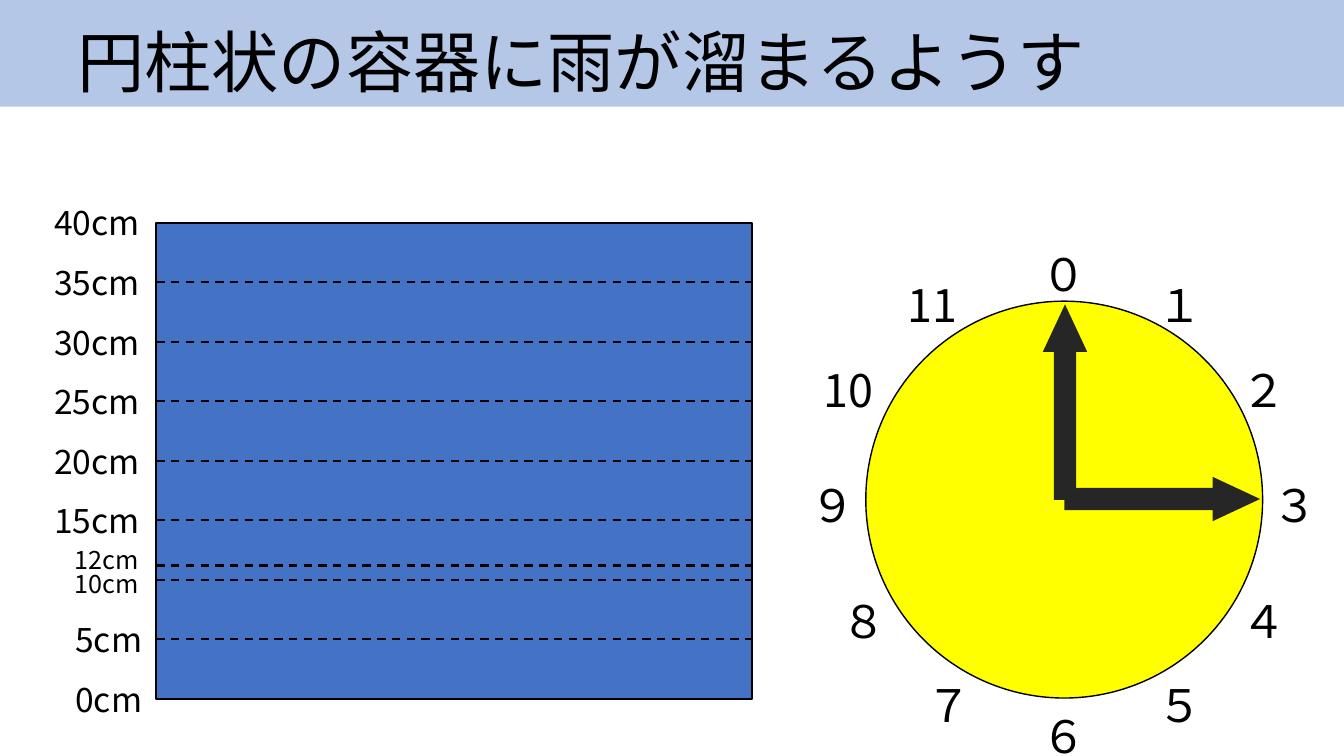
from dataclasses import dataclass
from math import cos, pi, sin

from lxml.etree import SubElement
from pptx import Presentation
from pptx.dml.color import RGBColor
from pptx.enum.dml import MSO_LINE
from pptx.enum.shapes import MSO_CONNECTOR, MSO_SHAPE as SHAPE
from pptx.enum.text import MSO_ANCHOR as ANCHOR, MSO_AUTO_SIZE as AUTOSIZE, PP_ALIGN as ALIGN
from pptx.oxml.ns import qn
from pptx.util import Cm, Pt


@dataclass(frozen=True)
class Theme:
    font: str = "Noto Sans CJK JP"
    ink: str = "000000"
    band: str = "B4C7E7"
    water: str = "4472C4"
    face: str = "FFFF00"
    hand: str = "262626"
    title: int = 48
    hour: int = 32
    label: int = 24
    small: int = 18


def write(tf, text, theme, size, align=ALIGN.LEFT, spacing=None):
    p = tf.paragraphs[0]
    p.alignment = align
    p.line_spacing = spacing
    r = p.add_run()
    r.text = text
    r.font.size = Pt(size)
    r.font.color.rgb = RGBColor.from_string(theme.ink)
    r.font.name = theme.font
    SubElement(r.font._element, qn("a:ea")).set("typeface", theme.font)


class Board:
    """Draws themed elements on one slide, with lengths in centimetres."""

    def __init__(self, prs, theme):
        self.theme = theme
        self.s = prs.slides.add_slide(prs.slide_layouts[5])

    def title(self, text, width, height):
        sp = self.s.shapes.title
        sp.left, sp.top, sp.width, sp.height = Cm(0), Cm(0), Cm(width), Cm(height)
        sp.fill.solid()
        sp.fill.fore_color.rgb = RGBColor.from_string(self.theme.band)
        tf = sp.text_frame
        tf.auto_size = AUTOSIZE.NONE
        tf.vertical_anchor = ANCHOR.BOTTOM
        tf.margin_left = Cm(1.95)
        write(tf, text, self.theme, self.theme.title, spacing=0.9)

    def shape(self, kind, left, top, width, height, fill=None, line=None):
        sp = self.s.shapes.add_shape(kind, Cm(left), Cm(top), Cm(width), Cm(height))
        sp.shadow.inherit = False
        if fill:
            sp.fill.solid()
            sp.fill.fore_color.rgb = RGBColor.from_string(fill)
        else:
            sp.fill.background()
        if line:
            sp.line.color.rgb = RGBColor.from_string(self.theme.ink)
            sp.line.width = Pt(line)
        else:
            sp.line.fill.background()
        return sp

    def hand(self, left, top, rotation=0):
        sp = self.shape(SHAPE.UP_ARROW, left, top, 1.12, 4.93, self.theme.hand)
        sp.adjustments[0] = 0.5
        sp.adjustments[1] = 1.07
        sp.rotation = rotation

    def dashed(self, left, right, y):
        ln = self.s.shapes.add_connector(MSO_CONNECTOR.STRAIGHT, Cm(left), Cm(y), Cm(right), Cm(y))
        ln.line.color.rgb = RGBColor.from_string(self.theme.ink)
        ln.line.width = Pt(1.5)
        ln.line.dash_style = MSO_LINE.DASH
        SubElement(ln._element.spPr, qn("a:effectLst"))
        return ln

    def text(self, text, left, middle, width, height, size, align=ALIGN.LEFT):
        sp = self.s.shapes.add_textbox(Cm(left), Cm(middle - height / 2), Cm(width), Cm(height))
        tf = sp.text_frame
        tf.word_wrap = False
        tf.auto_size = AUTOSIZE.SHAPE_TO_FIT_TEXT
        write(tf, text, self.theme, size, align)


def draw_tank(board):
    theme = board.theme
    left, top, width, height = 3.94, 5.61, 15.01, 12
    right, bottom, unit = left + width, top + height, height / 40
    for water_top, depth in ((top, 8.61), (bottom - 3.4, 3.4)):
        board.shape(SHAPE.RECTANGLE, left, water_top, width, depth, theme.water)
    tank = board.shape(SHAPE.RECTANGLE, left, top, width, height, line=1.5)
    for level in (5, 10, 11.2, 15, 20, 25, 30, 35):
        ln = board.dashed(left, right, bottom - level * unit)
        if level == 20:
            ln.begin_connect(tank, 1)
            ln.end_connect(tank, 3)
    for level in (0, 5, 15, 20, 25, 30, 35, 40):
        label_left = 1.65 if level < 10 else 1.12
        board.text(f"{level}cm", label_left, bottom - level * unit,
                   left - label_left, 1.27, theme.label)
    for text, middle in (("10cm", 14.71), ("12cm", 14.1)):
        board.text(text, 1.63, middle, 2.24, 1.02, theme.small)


def draw_clock(board):
    theme = board.theme
    x, y, radius, ring = 26.82, 12.73, 5, 5.82
    board.shape(SHAPE.OVAL, x - radius, 7.59, 2 * radius, 2 * radius, theme.face, 1)
    for hour, text in enumerate("０ １ ２ ３ ４ ５ ６ ７ ８ ９ 10 11".split()):
        angle = hour * pi / 6
        width, shift = (1.93, 0.4) if hour > 9 else (1.65, 0)
        board.text(text, x + ring * sin(angle) - shift - width / 2, y - ring * cos(angle),
                   width, 1.63, theme.hour, ALIGN.CENTER)
    board.hand(26.28, 7.67)
    board.hand(28.73, 10.11, 90)


def main():
    prs = Presentation()
    prs.slide_width, prs.slide_height = Cm(33.87), Cm(19.05)
    board = Board(prs, Theme())
    board.title("円柱状の容器に雨が溜まるようす", 33.87, 2.69)
    draw_tank(board)
    draw_clock(board)
    prs.save("out.pptx")


if __name__ == "__main__":
    main()
